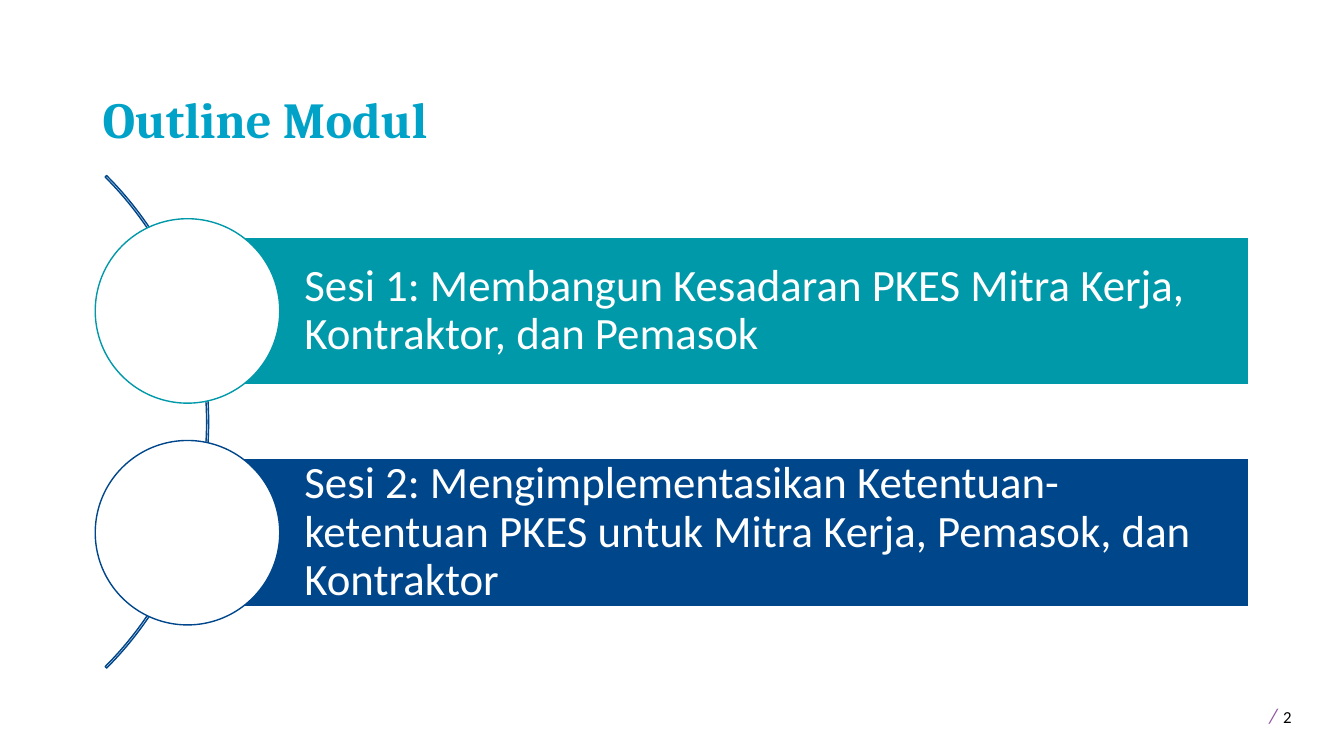
from pptx import Presentation
from pptx.dml.color import RGBColor
from pptx.enum.shapes import MSO_SHAPE as Shape
from pptx.enum.text import MSO_ANCHOR as Anchor, PP_ALIGN as Align
from pptx.util import Inches, Pt

WHITE = RGBColor(0xFF, 0xFF, 0xFF)
BLACK = RGBColor(0x00, 0x00, 0x00)
TEAL = RGBColor(0x00, 0x99, 0xA9)
NAVY = RGBColor(0x00, 0x46, 0x8B)
CYAN = RGBColor(0x00, 0xA2, 0xC7)
PURPLE = RGBColor(0x90, 0x53, 0xA1)

# Content
TITLE = "Outline Modul"
SESSIONS = [
    ("Sesi 1: Membangun Kesadaran PKES Mitra Kerja, Kontraktor, dan Pemasok", TEAL),
    ("Sesi 2: Mengimplementasikan Ketentuan-ketentuan PKES untuk Mitra Kerja, "
     "Pemasok, dan Kontraktor", NAVY),
]
PAGE_MARK = [
    ("/", dict(size=15, color=PURPLE, italic=True)),
    (" ", dict(size=18)),
    ("2", dict(size=12)),
]

# Layout in inches: rows are centred around the middle of the arc
SLIDE_W, SLIDE_H = 13.33, 7.5
ARC_LEFT, ARC_TOP, ARC_SIZE = -4.84, 0.73, 6.91
ROW_PITCH = 2.2
BAR_LEFT, BAR_W, BAR_H = 1.86, 10.53, 1.47
CIRCLE = 1.83

deck = Presentation()
deck.slide_width, deck.slide_height = Inches(SLIDE_W), Inches(SLIDE_H)
slide = deck.slides.add_slide(deck.slide_layouts[6])


def write(box, runs, anchor=Anchor.TOP, insets=(0.1, 0.05, 0.1, 0.05),
          spacing=None, font="Calibri"):
    """Fill a box with one left-aligned paragraph of (text, format) runs."""
    frame = box.text_frame
    frame.word_wrap = True
    frame.vertical_anchor = anchor
    (frame.margin_left, frame.margin_top,
     frame.margin_right, frame.margin_bottom) = map(Inches, insets)
    line = frame.paragraphs[0]
    line.alignment = Align.LEFT
    line.line_spacing = spacing
    for text, style in runs:
        run = line.add_run()
        run.text = text
        run.font.name = font
        run.font.size = Pt(style["size"])
        run.font.bold = style.get("bold", False)
        run.font.italic = style.get("italic", False)
        run.font.color.rgb = style.get("color", BLACK)


def text_box(left, top, width, height):
    return slide.shapes.add_textbox(*map(Inches, (left, top, width, height)))


def add_shape(kind, left, top, width, height, line, fill=None):
    shape = slide.shapes.add_shape(kind, *map(Inches, (left, top, width, height)))
    shape.shadow.inherit = False
    if fill is None:
        shape.fill.background()
    else:
        shape.fill.solid()
        shape.fill.fore_color.rgb = fill
    shape.line.color.rgb = line
    shape.line.width = Pt(1)
    return shape


# Page number
write(text_box(12.43, 6.88, 0.87, 0.4), PAGE_MARK, insets=(0.16, 0.05, 0.1, 0.05))

# Arc behind the sessions
arc = add_shape(Shape.BLOCK_ARC, ARC_LEFT, ARC_TOP, ARC_SIZE, ARC_SIZE, NAVY)
for index, value in enumerate((189, 27, 0.003)):
    arc.adjustments[index] = value

# One bar and one circle per session
arc_middle = ARC_TOP + ARC_SIZE / 2
for row, (session, color) in enumerate(SESSIONS):
    middle = arc_middle + (row - (len(SESSIONS) - 1) / 2) * ROW_PITCH
    bar = add_shape(Shape.RECTANGLE, BAR_LEFT, middle - BAR_H / 2, BAR_W, BAR_H,
                    WHITE, color)
    write(bar, [(session, dict(size=32, color=WHITE))], anchor=Anchor.MIDDLE,
          insets=(1.16, 0.09, 0.09, 0.09), spacing=0.9)
    add_shape(Shape.OVAL, BAR_LEFT - CIRCLE / 2, middle - CIRCLE / 2, CIRCLE, CIRCLE,
              color, WHITE)

# Title
write(text_box(0.92, 0.4, 11.5, 1.13), [(TITLE, dict(size=36, color=CYAN, bold=True))],
      anchor=Anchor.BOTTOM, spacing=0.9, font="Cambria")

deck.save("out.pptx")
